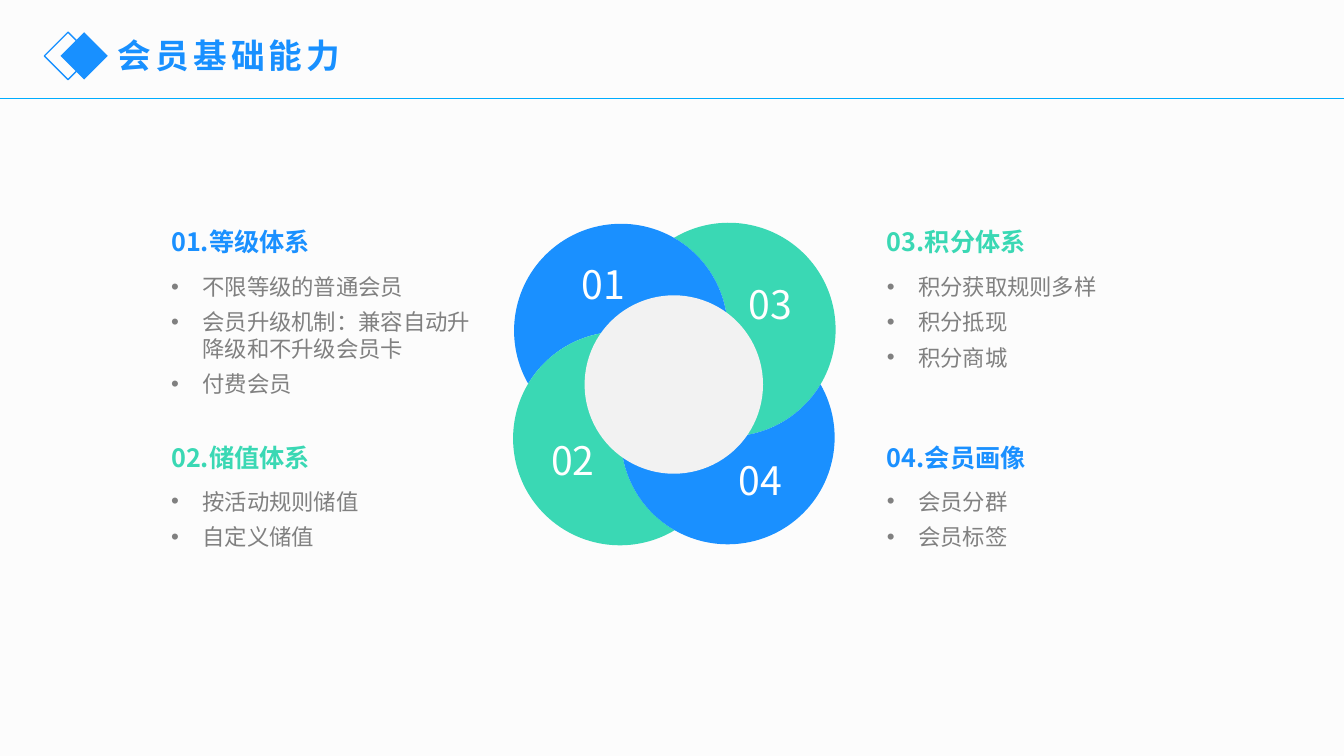
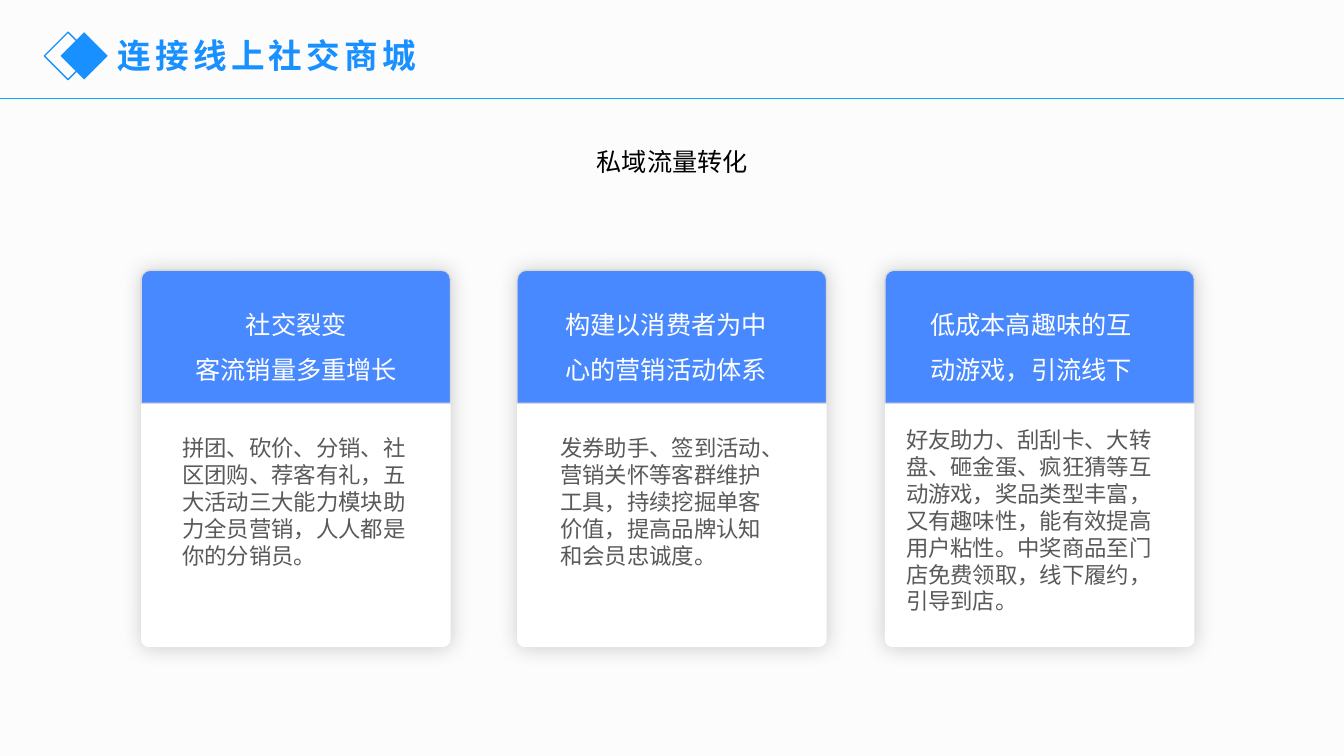
from math import acos, atan2, cos, hypot, pi, sin, tan

from lxml.etree import SubElement
from pptx import Presentation
from pptx.dml.color import RGBColor
from pptx.enum.shapes import MSO_CONNECTOR as Connector, MSO_SHAPE as Shape
from pptx.enum.text import MSO_AUTO_SIZE as AutoSize, PP_ALIGN as Align
from pptx.oxml.ns import qn
from pptx.util import Pt

PX = 9144
FONT = "Noto Sans CJK SC"
COLOURS = {
    "page": "FCFCFC", "title": "1890FF", "rule": "00ADFF",
    "blue": "1A90FF", "green": "3AD8B4", "hub": "F2F2F2",
    "list": "808080", "white": "FFFFFF", "black": "000000",
    "card_head": "4989FF", "card_edge": "D9D9D9", "card_text": "595959",
}

TOPICS = [
    ((160, 220, 334), 46, "01.等级体系", "blue",
     ["不限等级的普通会员", "会员升级机制：兼容自动升降级和不升级会员卡", "付费会员"]),
    ((160, 434, 334), 45, "02.储值体系", "green", ["按活动规则储值", "自定义储值"]),
    ((870, 220, 331), 46, "03.积分体系", "green",
     ["积分获取规则多样", "积分抵现", "积分商城"]),
    ((870, 434, 331), 45, "04.会员画像", "blue", ["会员分群", "会员标签"]),
]

PETAL_RADIUS = 106
PETAL_TURN = pi / 4
PETALS = [
    ("03", (214, 106), "green", (224, 52)),
    ("01", (107, 107), "blue", (58, 32)),
    ("02", (106, 214), "green", (28, 207)),
    ("04", (213, 213), "blue", (214, 227)),
]

CARDS = [
    (140, ["社交裂变", "客流销量多重增长"],
     (43, 19, 222, 94), {"align": Align.CENTER, "wrap": False},
     "拼团、砍价、分销、社区团购、荐客有礼，五大活动三大能力模块助力全员营销，人人都是你的分销员。",
     (31, 158, 246, 145)),
    (513, ["构建以消费者为中心的营销活动体系"],
     (38, 19, 231, 94), {},
     "发券助手、签到活动、营销关怀等客群维护工具，持续挖掘单客价值，提高品牌认知和会员忠诚度。",
     (33, 158, 240, 145)),
    (878, ["低成本高趣味的互动游戏，引流线下"],
     (35, 19, 238, 94), {},
     "好友助力、刮刮卡、大转盘、砸金蛋、疯狂猜等互动游戏，奖品类型丰富，又有趣味性，能有效提高用户粘性。"
     "中奖商品至门店免费领取，线下履约，引导到店。",
     (11, 150, 285, 199)),
]


def px(*lengths):
    """Turn pixel lengths into a list of EMU."""
    return [round(length * PX) for length in lengths]


def colour(name):
    """Look up a named colour."""
    return RGBColor.from_string(COLOURS[name])


def paint(shape, fill=None, line=None):
    """Set the fill and the outline of a shape and drop its shadow."""
    shape.shadow.inherit = False
    if fill:
        shape.fill.solid()
        shape.fill.fore_color.rgb = colour(fill)
    else:
        shape.fill.background()
    if line:
        shape.line.color.rgb = colour(line)
        shape.line.width = Pt(1)
    else:
        shape.line.fill.background()


def add_preset(shapes, kind, box, fill=None, line=None, adjust=()):
    """Add a painted preset shape."""
    shape = shapes.add_shape(kind, *px(*box))
    for index, value in enumerate(adjust):
        shape.adjustments[index] = value
    paint(shape, fill, line)
    return shape


def add_bullet(para):
    """Give a paragraph a hanging round bullet."""
    props = para._p.get_or_add_pPr()
    indent, = px(31)
    props.set("marL", str(indent))
    props.set("indent", str(-indent))
    SubElement(props, qn("a:buFont")).set("typeface", "Arial")
    SubElement(props, qn("a:buChar")).set("char", "•")


def write(page, box, lines, size, ink, bold=False, tracking=0, align=Align.LEFT,
          spacing=None, wrap=True, bullets=False, gap=0):
    """Add a text box with one paragraph for each line."""
    frame = page.shapes.add_textbox(*px(*box)).text_frame
    frame.word_wrap = wrap
    frame.auto_size = AutoSize.SHAPE_TO_FIT_TEXT
    for index, line in enumerate(lines):
        para = frame.paragraphs[0] if index == 0 else frame.add_paragraph()
        if bullets:
            add_bullet(para)
        para.alignment = align
        if spacing:
            para.line_spacing = spacing
        if index and gap:
            para.space_before = Pt(gap)
        span = para.add_run()
        span.text = line
        span.font.size = Pt(size)
        span.font.bold = bold
        span.font.color.rgb = colour(ink)
        span.font.name = FONT
        props = span._r.get_or_add_rPr()
        SubElement(props, qn("a:ea")).set("typeface", FONT)
        if tracking:
            props.set("spc", str(tracking * 100))


def add_page(deck, title):
    """Add a page with the shared background, rule, emblem and title."""
    page = deck.slides.add_slide(deck.slide_layouts[6])
    page.background.fill.solid()
    page.background.fill.fore_color.rgb = colour("page")
    rule = page.shapes.add_connector(Connector.STRAIGHT, 0, *px(98), deck.slide_width, *px(98))
    rule.line.color.rgb = colour("rule")
    rule.line.width = Pt(1)
    SubElement(rule._element.spPr, qn("a:effectLst"))
    add_preset(page.shapes, Shape.DIAMOND, (44, 32, 47, 47), line="title")
    add_preset(page.shapes, Shape.DIAMOND, (60, 32, 47, 47), fill="title")
    write(page, (107, 30, 600, 50), [title], 24, "title", bold=True, tracking=3)
    return page


def add_command(outline, kind, points=()):
    """Append one drawing command to an outline."""
    command = SubElement(outline, qn(f"a:{kind}"))
    for point in points:
        x, y = px(*point)
        SubElement(command, qn("a:pt"), x=str(x), y=str(y))


def add_arc(outline, centre, radius, start, end, pieces):
    """Append a circular arc as curves; angles are in radians."""
    step = (end - start) / pieces
    pull = 4 / 3 * tan(step / 4)

    def at(angle, lean=0):
        """Find a point on the arc, or its handle."""
        return (centre[0] + radius * (cos(angle) - lean * sin(angle)),
                centre[1] + radius * (sin(angle) + lean * cos(angle)))

    for piece in range(pieces):
        here, there = start + piece * step, start + (piece + 1) * step
        add_command(outline, "cubicBezTo", [at(here, pull), at(there, -pull), at(there)])


def add_petal(page, centre, cover, fill):
    """Add a turned disc without the part that an equal disc covers."""
    x, y = centre
    r = PETAL_RADIUS
    builder = page.shapes.build_freeform(*px(x - r, y), scale=1.0)
    builder.add_line_segments([px(x, y - r), px(x + r, y), px(x, y + r)], close=True)
    petal = builder.convert_to_shape()
    petal.rotation = 45
    paint(petal, fill)

    outline = next(petal._element.iter(qn("a:path")))
    for command in list(outline):
        outline.remove(command)
    across, down = cover[0] - x, cover[1] - y
    apart = hypot(across, down)
    toward = atan2(down, across) - PETAL_TURN
    half = acos(apart / (2 * r))
    tip = toward + half
    other = (r + apart * cos(toward), r + apart * sin(toward))
    add_command(outline, "moveTo", [(r + r * cos(tip), r + r * sin(tip))])
    add_arc(outline, (r, r), r, tip, toward - half + 2 * pi, 3)
    add_arc(outline, other, r, toward + pi + half, toward + pi - half, 2)
    add_command(outline, "close")


def add_flower(page, left, top):
    """Draw four interlocked petals around a hub, with their numbers."""
    centres = [(left + x, top + y) for _, (x, y), _, _ in PETALS]
    for index, (_, _, fill, _) in enumerate(PETALS):
        add_petal(page, centres[index], centres[(index + 1) % len(centres)], fill)
    add_preset(page.shapes, Shape.OVAL, (left + 71, top + 72, 177, 177), fill="hub")
    for number, _, _, (x, y) in PETALS:
        write(page, (left + x, top + y, 64, 57), [number], 28, "white", wrap=False)


def add_topic(page, place, drop, heading, ink, items):
    """Write a coloured heading with its bullet list."""
    left, top, width = place
    write(page, (left, top, width, 40), [heading], 18, ink, bold=True)
    write(page, (left, top + drop, width, 36 * len(items)), items, 16, "list",
          bullets=True, gap=6)


def add_glow(shape):
    """Put a soft even shadow around a shape."""
    effects = shape._element.spPr.find(qn("a:effectLst"))
    shadow = SubElement(effects, qn("a:outerShdw"), blurRad=str(Pt(15)), dist="0",
                        dir="0", algn="ctr", rotWithShape="0")
    tint = SubElement(shadow, qn("a:srgbClr"), val=COLOURS["black"])
    SubElement(tint, qn("a:alpha"), val="20000")


def add_card(page, left, top, heading, head_box, head_format, body, body_box):
    """Draw a card with a coloured head and write its two texts."""
    card = page.shapes.add_group_shape()
    add_glow(add_preset(card.shapes, Shape.ROUNDED_RECTANGLE, (left, top, 307, 374),
                        fill="white", adjust=[0.025]))
    add_preset(card.shapes, Shape.ROUND_2_SAME_RECTANGLE, (left, top, 307, 132),
               fill="card_head", line="card_edge", adjust=[0.07, 0])
    for lines, (x, y, width, height), style in (
        (heading, head_box, dict(size=18, ink="white", spacing=1.5, **head_format)),
        ([body], body_box, dict(size=16, ink="card_text")),
    ):
        write(page, (left + x, top + y, width, height), lines, **style)


def build_abilities(deck):
    """Build the page on basic member abilities."""
    page = add_page(deck, "会员基础能力")
    add_flower(page, 509, 221)
    for topic in TOPICS:
        add_topic(page, *topic)


def build_mall(deck):
    """Build the page on the online mall."""
    page = add_page(deck, "连接线上社交商城")
    write(page, (581, 140, 172, 40), ["私域流量转化"], 18, "black",
          align=Align.CENTER, wrap=False)
    for left, *parts in CARDS:
        add_card(page, left, 268, *parts)


def main():
    """Build and save the deck."""
    deck = Presentation()
    deck.slide_width, deck.slide_height = px(4000 / 3, 750)
    build_abilities(deck)
    build_mall(deck)
    deck.save("out.pptx")


if __name__ == "__main__":
    main()
